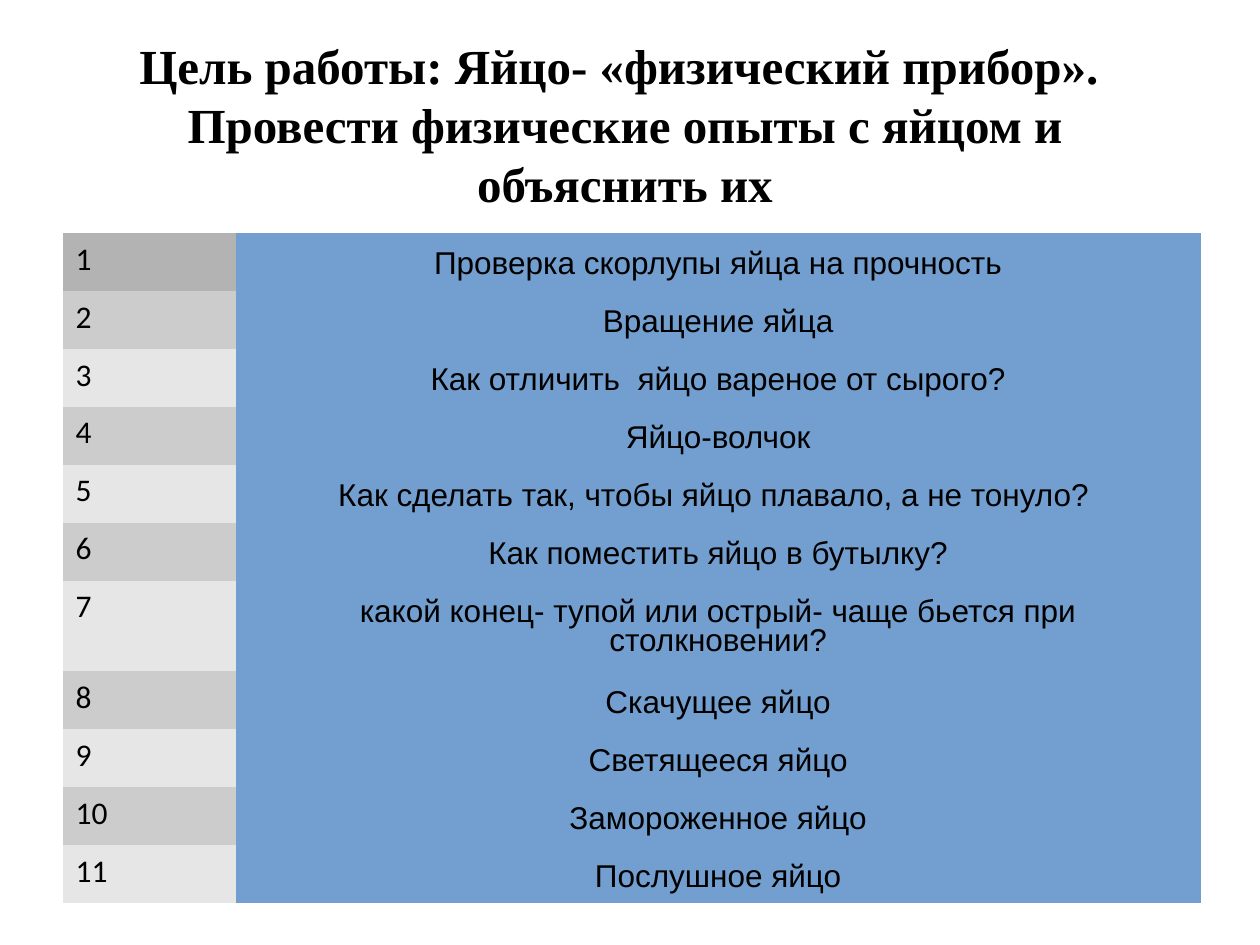
from pptx import Presentation
from pptx.dml.color import RGBColor
from pptx.enum.text import MSO_ANCHOR, PP_ALIGN
from pptx.util import Inches, Pt

LEFT = PP_ALIGN.LEFT
CENTER = PP_ALIGN.CENTER
MIDDLE = MSO_ANCHOR.MIDDLE

TITLE = "Цель работы: Яйцо- «физический прибор». \vПровести физические опыты с яйцом и объяснить их"
EXPERIMENTS = [
    "Проверка скорлупы яйца на прочность",
    "Вращение яйца",
    "Как отличить  яйцо вареное от сырого?",
    "Яйцо-волчок",
    "Как сделать так, чтобы яйцо плавало, а не тонуло? ",
    "Как поместить яйцо в бутылку?",
    "какой конец- тупой или острый- чаще бьется при столкновении?",
    "Скачущее яйцо",
    "Светящееся яйцо",
    "Замороженное яйцо",
    "Послушное яйцо",
]
COLORS = {
    "text": "000000",
    "first": "B3B3B3",
    "odd": "E6E6E6",
    "even": "CCCCCC",
    "experiment": "729FCF",
}
COLUMN_WIDTHS = [1.37, 7.66]
ROW_HEIGHT = 0.46
TALL_ROW_HEIGHT = 0.72
LONG_TEXT = 55
PLAIN_TABLE_STYLE = "{2D5ABB26-0587-4C30-8999-92F81FD0307C}"


def write_text(frame, text, font, size, align=LEFT, bold=False, line_spacing=None, space_after=0):
    frame.word_wrap = True
    paragraph = frame.paragraphs[0]
    paragraph.text = text
    paragraph.alignment = align
    paragraph.line_spacing = line_spacing
    paragraph.space_after = Pt(space_after)
    for run in paragraph.runs:
        run.font.name = font
        run.font.size = Pt(size)
        run.font.bold = bold
        run.font.color.rgb = RGBColor.from_string(COLORS["text"])


def fill_cell(cell, text, color, margin_top, **text_format):
    cell.margin_left = cell.margin_right = Inches(0.1)
    cell.margin_top = Inches(margin_top)
    cell.margin_bottom = Inches(0.05)
    cell.fill.solid()
    cell.fill.fore_color.rgb = RGBColor.from_string(COLORS[color])
    write_text(cell.text_frame, text, size=18, space_after=14.2, **text_format)


def number_color(number):
    if number == 1:
        return "first"
    return "odd" if number % 2 else "even"


def add_experiments(slide):
    heights = [TALL_ROW_HEIGHT if len(text) > LONG_TEXT else ROW_HEIGHT for text in EXPERIMENTS]
    frame = slide.shapes.add_table(
        len(EXPERIMENTS), len(COLUMN_WIDTHS),
        Inches(0.5), Inches(1.85), Inches(sum(COLUMN_WIDTHS)), Inches(sum(heights)),
    )
    table = frame.table
    table._tbl.tblPr[0].text = PLAIN_TABLE_STYLE
    table.first_row = False
    table.horz_banding = False
    for column, width in zip(table.columns, COLUMN_WIDTHS):
        column.width = Inches(width)
    for index, (text, height) in enumerate(zip(EXPERIMENTS, heights)):
        number = index + 1
        table.rows[index].height = Inches(height)
        fill_cell(table.cell(index, 0), str(number), number_color(number), 0.05,
                  font="Calibri", line_spacing=1.02)
        fill_cell(table.cell(index, 1), text, "experiment", 0.15,
                  font="Arial", line_spacing=0.81, align=CENTER)


def main():
    presentation = Presentation()
    presentation.slide_width = Inches(10)
    presentation.slide_height = Inches(7.5)
    slide = presentation.slides.add_slide(presentation.slide_layouts[5])
    title = slide.shapes.title
    title.left, title.top = Inches(0.78), Inches(0.23)
    title.width, title.height = Inches(8.36), Inches(1.51)
    title.text_frame.vertical_anchor = MIDDLE
    write_text(title.text_frame, TITLE, "Times New Roman", 28, align=CENTER, bold=True)
    add_experiments(slide)
    presentation.save("out.pptx")


if __name__ == "__main__":
    main()
